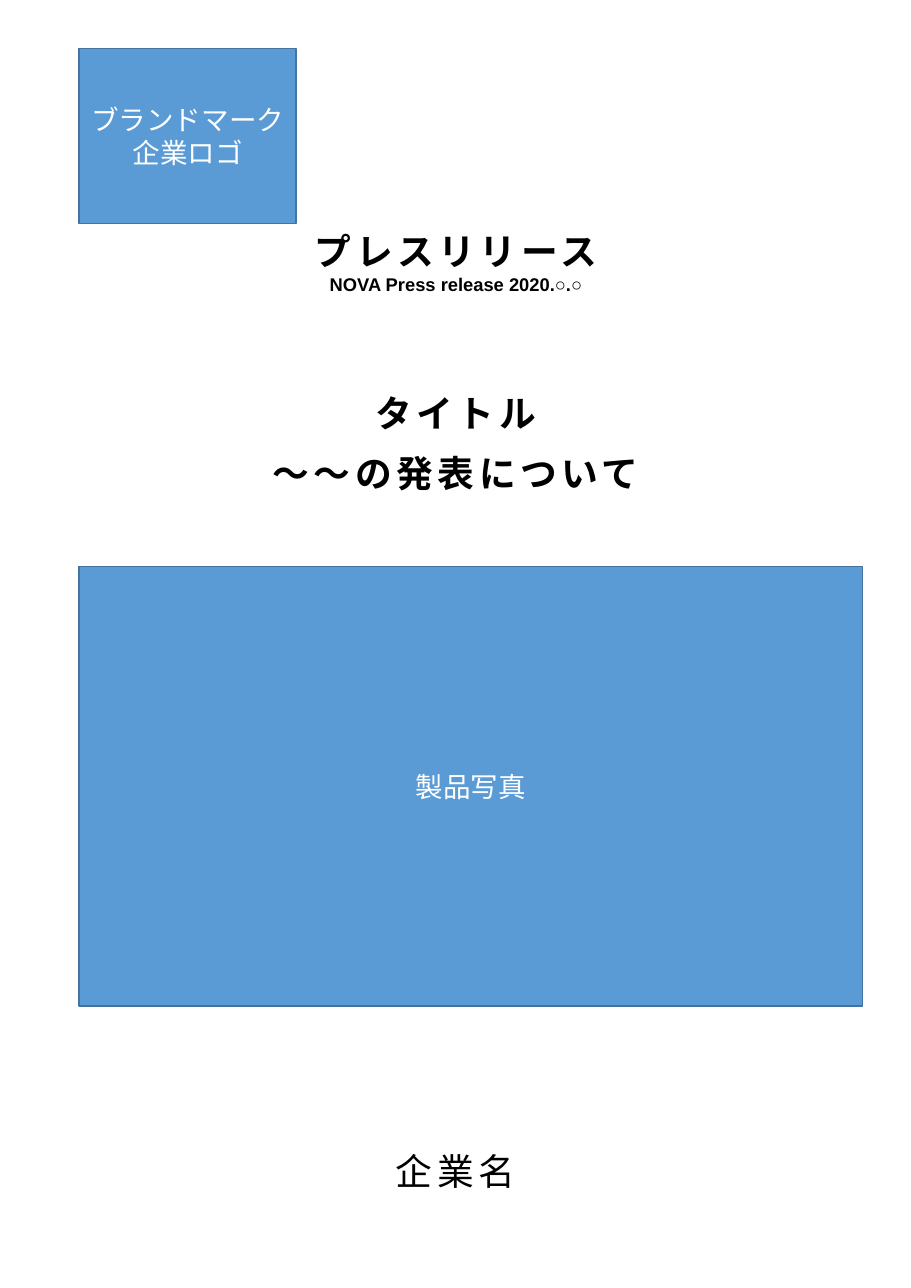
"""Build the cover page of a press release."""
from dataclasses import dataclass

from pptx import Presentation
from pptx.dml.color import RGBColor
from pptx.enum import shapes, text
from pptx.util import Pt


@dataclass(frozen=True)
class Theme:
    font: str = "Arial"
    ink: str = "000000"
    pale: str = "FFFFFF"
    fill: str = "5B9BD5"
    edge: str = "43739E"
    head: int = 24
    label: int = 18
    small: int = 12
    track: int = 3
    lead: int = 39


THEME = Theme()


def style(para, size, color, bold=False, track=0, lead=None):
    para.alignment = text.PP_ALIGN.CENTER
    if lead:
        para.line_spacing = Pt(lead)
    for run in para.runs:
        font = run.font
        font.name = THEME.font
        font.size = Pt(size)
        font.bold = bold
        font.color.rgb = RGBColor.from_string(color)
        if track:
            run._r.get_or_add_rPr().set("spc", str(track * 100))


def add_text(slide, box, words, bold=False, lead=None):
    frame = slide.shapes.add_textbox(*map(Pt, box)).text_frame
    frame.word_wrap = True
    frame.auto_size = text.MSO_AUTO_SIZE.SHAPE_TO_FIT_TEXT
    frame.text = words
    for para in frame.paragraphs:
        style(para, THEME.head, THEME.ink, bold, THEME.track, lead)
    return frame


def add_panel(slide, box, words):
    panel = slide.shapes.add_shape(shapes.MSO_SHAPE.RECTANGLE, *map(Pt, box))
    panel.shadow.inherit = False
    panel.fill.solid()
    panel.fill.fore_color.rgb = RGBColor.from_string(THEME.fill)
    panel.line.color.rgb = RGBColor.from_string(THEME.edge)
    panel.line.width = Pt(1)
    frame = panel.text_frame
    frame.word_wrap = True
    frame.vertical_anchor = text.MSO_ANCHOR.MIDDLE
    frame.text = words
    for para in frame.paragraphs:
        style(para, THEME.label, THEME.pale)


def main():
    deck = Presentation()
    deck.slide_width, deck.slide_height = Pt(595.4), Pt(841.7)
    slide = deck.slides.add_slide(deck.slide_layouts[6])

    head = add_text(slide, (180, 146.2, 236.2, 51.1),
                    "プレスリリース\nNOVA Press release 2020.○.○", bold=True)
    date = head.paragraphs[1]
    for run in date.runs:
        run._r.get_or_add_rPr().set("spc", "0")
    style(date, THEME.small, THEME.ink, bold=True)

    left, wide = 128.2, 339.1
    add_text(slide, (left, 241.9, wide, 83.5),
             "タイトル\n～～の発表について", bold=True, lead=THEME.lead)
    add_text(slide, (left, 737.3, wide, 41), "企業名", lead=THEME.lead)

    edge = 51.8
    add_panel(slide, (edge, 31.7, 141.8, 114.5), "ブランドマーク\n企業ロゴ")
    add_panel(slide, (edge, 370.1, 511.9, 287.3), "製品写真")
    deck.save("out.pptx")


if __name__ == "__main__":
    main()
